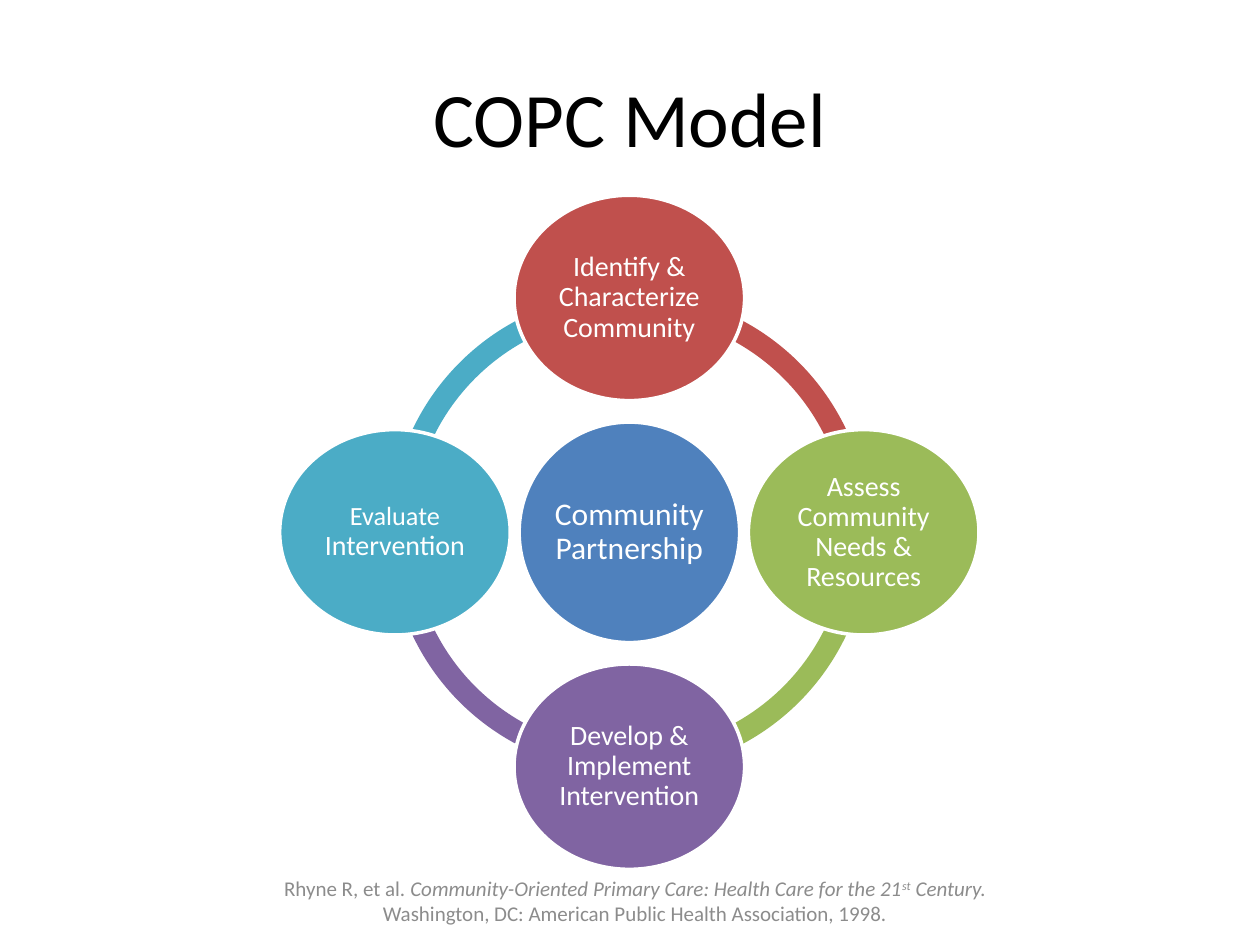
from dataclasses import dataclass

from pptx import Presentation
from pptx.dml.color import RGBColor
from pptx.enum.shapes import MSO_SHAPE
from pptx.enum.text import MSO_ANCHOR, PP_ALIGN
from pptx.util import Emu, Pt

ARC, OVAL = MSO_SHAPE.BLOCK_ARC, MSO_SHAPE.OVAL
CENTER, MIDDLE = PP_ALIGN.CENTER, MSO_ANCHOR.MIDDLE
PX = 9144  # 100 px to the inch


@dataclass(frozen=True)
class Theme:
    font: str = "Calibri"
    ink: str = "000000"
    white: str = "FFFFFF"
    gray: str = "8C8C8C"
    blue: str = "4F81BD"
    red: str = "C0504D"
    green: str = "9BBB59"
    purple: str = "8064A2"
    teal: str = "4BACC6"
    title: int = 44
    hub: int = 18
    node: int = 16
    small: int = 15
    note: int = 12
    edge: int = 2


class Deck:
    def __init__(self, theme, width, height):
        self.theme = theme
        self.prs = Presentation()
        self.prs.slide_width, self.prs.slide_height = Emu(width * PX), Emu(height * PX)
        self.slide = self.prs.slides.add_slide(self.prs.slide_layouts[5])

    def label(self, frame, runs, color, inset=None, space=None):
        """Fill a frame with one centred paragraph of (text, size, italic, raised) runs."""
        frame.word_wrap = True
        frame.vertical_anchor = MIDDLE
        if inset is not None:
            frame.margin_left = frame.margin_right = Emu(inset * PX)
            frame.margin_top = frame.margin_bottom = Emu(inset * PX)
        para = frame.paragraphs[0]
        para.alignment = CENTER
        if space:
            para.line_spacing = space
        for text, size, italic, raised in runs:
            run = para.add_run()
            run.text = text
            font = run.font
            font.name, font.size, font.italic = self.theme.font, Pt(size), italic
            font.color.rgb = RGBColor.from_string(color)
            if raised:
                run._r.get_or_add_rPr().set("baseline", "30000")

    def title(self, text, *box):
        head = self.slide.shapes.title
        head.left, head.top, head.width, head.height = (Emu(n * PX) for n in box)
        self.label(head.text_frame, [(text, self.theme.title, False, False)], self.theme.ink)

    def shape(self, kind, mid, width, height, fill):
        """Add a plain shape centred on a point."""
        x, y = mid
        item = self.slide.shapes.add_shape(
            kind, *(Emu(n * PX) for n in (x - (width + 1) // 2, y - (height + 1) // 2,
                                          width, height)))
        item.shadow.inherit = False
        item.fill.solid()
        item.fill.fore_color.rgb = RGBColor.from_string(fill)
        item.line.fill.background()
        return item

    def arc(self, mid, size, start, end, fill):
        item = self.shape(ARC, mid, size, size, fill)
        # An angle is stored in 60000ths of a degree, an adjustment in 100000ths
        for i, value in enumerate((start * 0.6, end * 0.6, 0.046)):
            item.adjustments[i] = value

    def oval(self, mid, width, height, fill, runs):
        item = self.shape(OVAL, mid, width, height, fill)
        item.line.color.rgb = RGBColor.from_string(self.theme.white)
        item.line.width = Pt(self.theme.edge)
        self.label(item.text_frame, [(*run, False, False) for run in runs],
                   self.theme.white, 2, 0.9)

    def note(self, runs, *box):
        item = self.slide.shapes.add_textbox(*(Emu(n * PX) for n in box))
        self.label(item.text_frame, [(text, self.theme.note, *look) for text, *look in runs],
                   self.theme.gray)

    def save(self):
        self.prs.save("out.pptx")


def main():
    look = Theme()
    deck = Deck(look, 1000, 750)
    deck.title("COPC Model", 50, 30, 900, 125)

    x, y = 500, 423
    reach = 186
    steps = [  # clockwise from the top
        (0, -1, look.red, [("Identify & Characterize Community", look.node)]),
        (1, 0, look.green, [("Assess Community Needs & Resources", look.node)]),
        (0, 1, look.purple, [("Develop & Implement Intervention", look.node)]),
        (-1, 0, look.teal, [("Evaluate ", look.small), ("Intervention", look.node)]),
    ]
    for i, (_, _, color, _) in reversed(list(enumerate(steps))):
        start = (270 + 90 * i) % 360
        deck.arc((x, y), 381, start, (start + 90) % 360, color)
    deck.oval((x, y), 175, 175, look.blue, [("Community Partnership", look.hub)])
    for dx, dy, color, runs in steps:
        deck.oval((x + dx * reach, y + dy * reach), 183, 163, color, runs)

    deck.note([
        ("Rhyne R, et al. ", False, False),
        ("Community-Oriented Primary Care: Health Care for the 21", True, False),
        ("st", True, True),
        (" Century. ", True, False),
        ("Washington, DC: American Public Health Association, 1998.", False, False),
    ], 183, 695, 642, 40)
    deck.save()


if __name__ == "__main__":
    main()
